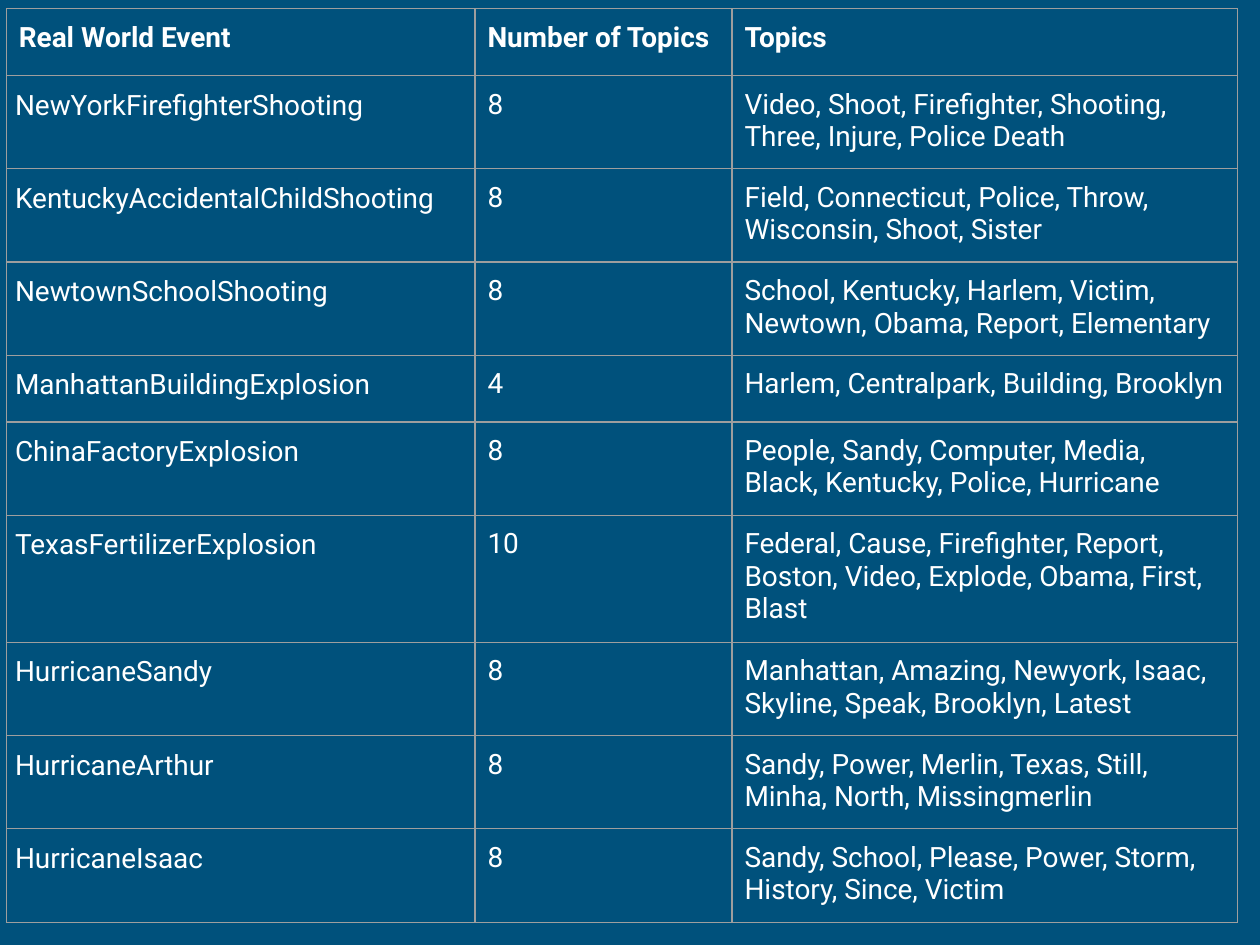
from lxml import etree
from pptx import Presentation
from pptx import util as u
from pptx.dml import color
from pptx.oxml import ns

BACKGROUND, WHITE, GREY = "00517C", "FFFFFF", "9E9E9E"
FONT, TEXT_SIZE, BORDER_WIDTH = "Roboto", 16, 0.75
LEFT, TOP = 0.05, 0.07
COLUMN_WIDTHS = (3.72, 2.04, 4.01)
HEIGHT_BY_LINES = {1: 0.53, 2: 0.74, 3: 1.01}
HEADER = ("Real World Event", "Number of Topics", "Topics")
EVENTS = (
    ("NewYorkFirefighterShooting", 8, 2,
     "Video, Shoot, Firefighter, Shooting, Three, Injure, Police Death"),
    ("KentuckyAccidentalChildShooting", 8, 2,
     "Field, Connecticut, Police, Throw, Wisconsin, Shoot, Sister"),
    ("NewtownSchoolShooting", 8, 2,
     "School, Kentucky, Harlem, Victim, Newtown, Obama, Report, Elementary"),
    ("ManhattanBuildingExplosion", 4, 1,
     "Harlem, Centralpark, Building, Brooklyn"),
    ("ChinaFactoryExplosion", 8, 2,
     "People, Sandy, Computer, Media, Black, Kentucky, Police, Hurricane"),
    ("TexasFertilizerExplosion", 10, 3,
     "Federal, Cause, Firefighter, Report, Boston, Video, Explode, Obama, First, Blast"),
    ("HurricaneSandy", 8, 2,
     "Manhattan, Amazing, Newyork, Isaac, Skyline, Speak, Brooklyn, Latest"),
    ("HurricaneArthur", 8, 2,
     "Sandy, Power, Merlin, Texas, Still, Minha, North, Missingmerlin"),
    ("HurricaneIsaac", 8, 2,
     "Sandy, School, Please, Power, Storm, History, Since, Victim"),
)


def paint(target, value):
    """Give a fill or a font colour the hex value."""
    if hasattr(target, "solid"):
        target.solid()
        target.fore_color.rgb = color.RGBColor.from_string(value)
    else:
        target.rgb = color.RGBColor.from_string(value)


def add_borders(cell):
    """Draw a thin grey line on all four sides of a cell."""
    properties = cell._tc.get_or_add_tcPr()
    for side in ("a:lnL", "a:lnR", "a:lnT", "a:lnB"):
        line = etree.SubElement(properties, ns.qn(side), w=str(u.Pt(BORDER_WIDTH)))
        fill = etree.SubElement(line, ns.qn("a:solidFill"))
        etree.SubElement(fill, ns.qn("a:srgbClr"), val=GREY)


def fill_cell(cell, content, is_header, is_event):
    """Write and format one table cell."""
    add_borders(cell)
    cell.fill.background()
    inset = u.Inches(0.07 if is_event else 0.1)
    cell.margin_left = cell.margin_right = inset
    cell.margin_top = cell.margin_bottom = inset
    paragraph = cell.text_frame.paragraphs[0]
    paragraph.text = str(content)
    if is_event:
        paragraph.line_spacing = 1.15
    font = paragraph.runs[0].font
    font.name, font.size, font.bold = FONT, u.Pt(TEXT_SIZE), is_header
    paint(font.color, WHITE)


def add_event_table(slide):
    """Add the table of events and their topics."""
    rows = [HEADER] + [(event, count, topics) for event, count, _, topics in EVENTS]
    heights = [HEIGHT_BY_LINES[lines] for lines in [1] + [event[2] for event in EVENTS]]
    table = slide.shapes.add_table(
        len(rows), len(HEADER), u.Inches(LEFT), u.Inches(TOP),
        u.Inches(sum(COLUMN_WIDTHS)), u.Inches(sum(heights))).table
    table.first_row = table.horz_banding = False
    for column, width in zip(table.columns, COLUMN_WIDTHS):
        column.width = u.Inches(width)
    for row, height in zip(table.rows, heights):
        row.height = u.Inches(height)
    for row_index, row in enumerate(rows):
        for column_index, content in enumerate(row):
            is_header = row_index == 0
            is_event = column_index == 0 and not is_header
            fill_cell(table.cell(row_index, column_index), content, is_header, is_event)


def main():
    """Build the slide and save it."""
    presentation = Presentation()
    presentation.slide_width, presentation.slide_height = u.Inches(10), u.Inches(7.5)
    slide = presentation.slides.add_slide(presentation.slide_layouts[6])
    paint(slide.background.fill, BACKGROUND)
    add_event_table(slide)
    presentation.save("out.pptx")


if __name__ == "__main__":
    main()
